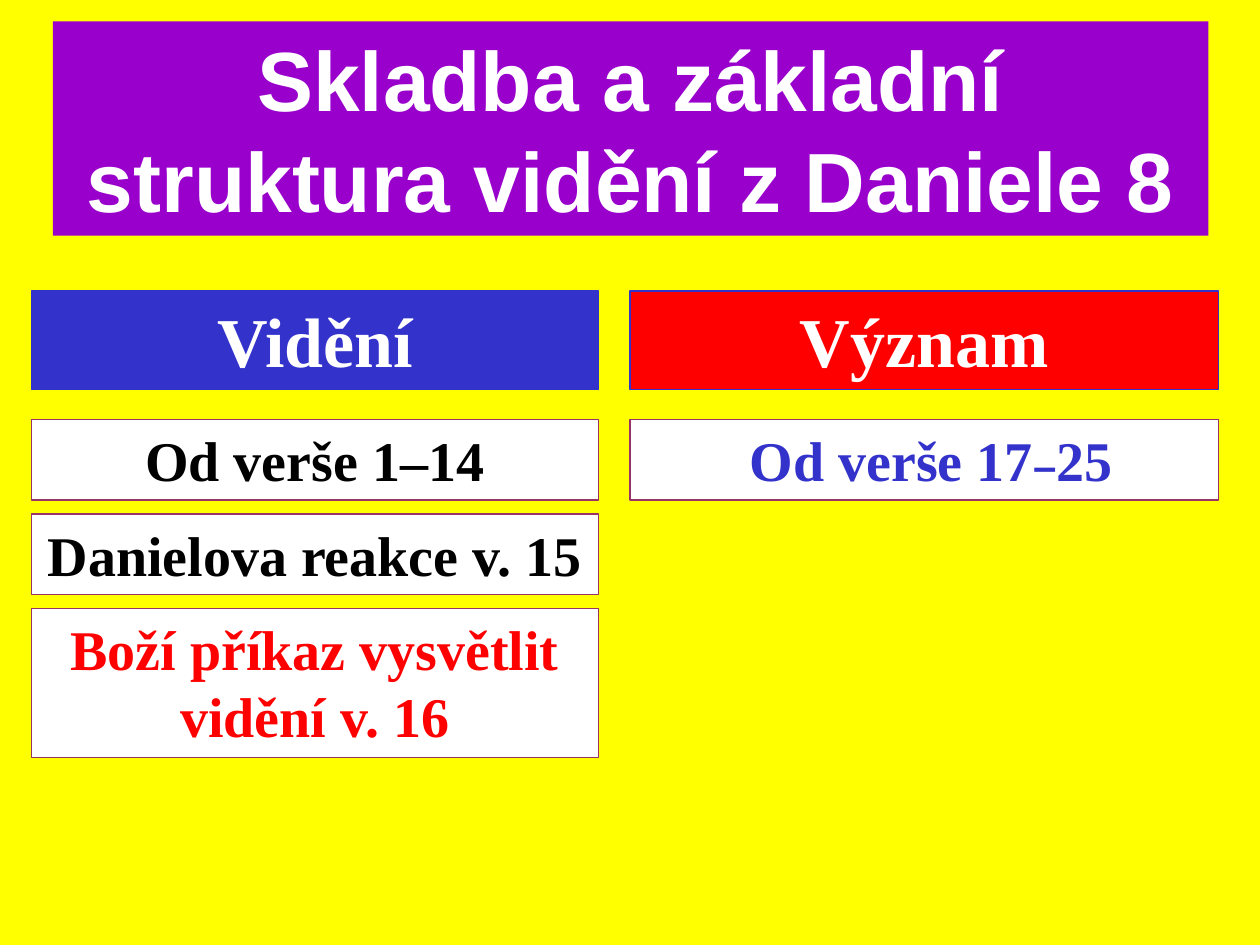
import pptx
import pptx.dml.color
import pptx.enum.shapes
import pptx.enum.text
import pptx.util

Inches = pptx.util.Inches
Pt = pptx.util.Pt
RGBColor = pptx.dml.color.RGBColor

YELLOW = RGBColor(0xFF, 0xFF, 0x00)
PURPLE = RGBColor(0x99, 0x00, 0xCC)
BLUE = RGBColor(0x33, 0x33, 0xCC)
RED = RGBColor(0xFF, 0x00, 0x00)
PLUM = RGBColor(0x99, 0x33, 0x66)
WHITE = RGBColor(0xFF, 0xFF, 0xFF)
BLACK = RGBColor(0x00, 0x00, 0x00)

SERIF, SANS = "Times New Roman", "Arial"


def add_run(p, text, size=32, font=SERIF, color=BLACK):
    r = p.add_run()
    r.text = text
    r.font.size = Pt(size)
    r.font.name = font
    r.font.bold = True
    r.font.color.rgb = color


def add_box(s, left, top, width, height, fill=WHITE, line=PLUM):
    """Add a filled box and return its centred paragraph."""
    sp = s.shapes.add_shape(
        pptx.enum.shapes.MSO_SHAPE.RECTANGLE,
        Inches(left), Inches(top), Inches(width), Inches(height))
    sp.shadow.inherit = False
    sp.fill.solid()
    sp.fill.fore_color.rgb = fill
    if line is None:
        sp.line.fill.background()
    else:
        sp.line.color.rgb = line
        sp.line.width = Pt(0.75)
    tf = sp.text_frame
    tf.word_wrap = True
    tf.vertical_anchor = pptx.enum.text.MSO_ANCHOR.TOP
    p = tf.paragraphs[0]
    p.alignment = pptx.enum.text.PP_ALIGN.CENTER
    return p


prs = pptx.Presentation()
prs.slide_width, prs.slide_height = Inches(10), Inches(7.5)
s = prs.slides.add_slide(prs.slide_layouts[6])
s.background.fill.solid()
s.background.fill.fore_color.rgb = YELLOW

# Title
p = add_box(s, 0.42, 0.17, 9.17, 1.7, fill=PURPLE, line=None)
add_run(p, "Skladba a základní struktura vidění z Daniele 8",
        size=48, font=SANS, color=WHITE)

# Column headings
VISION, MEANING = (0.25, 4.5), (5, 4.67)  # left, width
for (left, width), text, fill in [(VISION, "Vidění", BLUE),
                                  (MEANING, "Význam", RED)]:
    p = add_box(s, left, 2.31, width, 0.78, fill=fill, line=BLUE)
    add_run(p, text, size=40, color=WHITE)

# Vision column, one box every 0.75 inch
left, width = VISION
ROW_TOP, ROW_STEP, ROW_HEIGHT = 3.33, 0.75, 0.64
rows = [("Od verše 1–14", ROW_HEIGHT, BLACK),
        ("Danielova reakce v. 15", ROW_HEIGHT, BLACK),
        ("Boží příkaz vysvětlit vidění v. 16", 1.18, RED)]
for i, (text, height, color) in enumerate(rows):
    p = add_box(s, left, ROW_TOP + i * ROW_STEP, width, height)
    add_run(p, text, color=color)

# Meaning column, with a smaller dash between the verse numbers
left, width = MEANING
p = add_box(s, left, ROW_TOP, width, ROW_HEIGHT)
add_run(p, " Od verše 17", color=BLUE)
add_run(p, "–", size=24, font=SANS, color=BLUE)
add_run(p, "25", color=BLUE)

prs.save("out.pptx")
